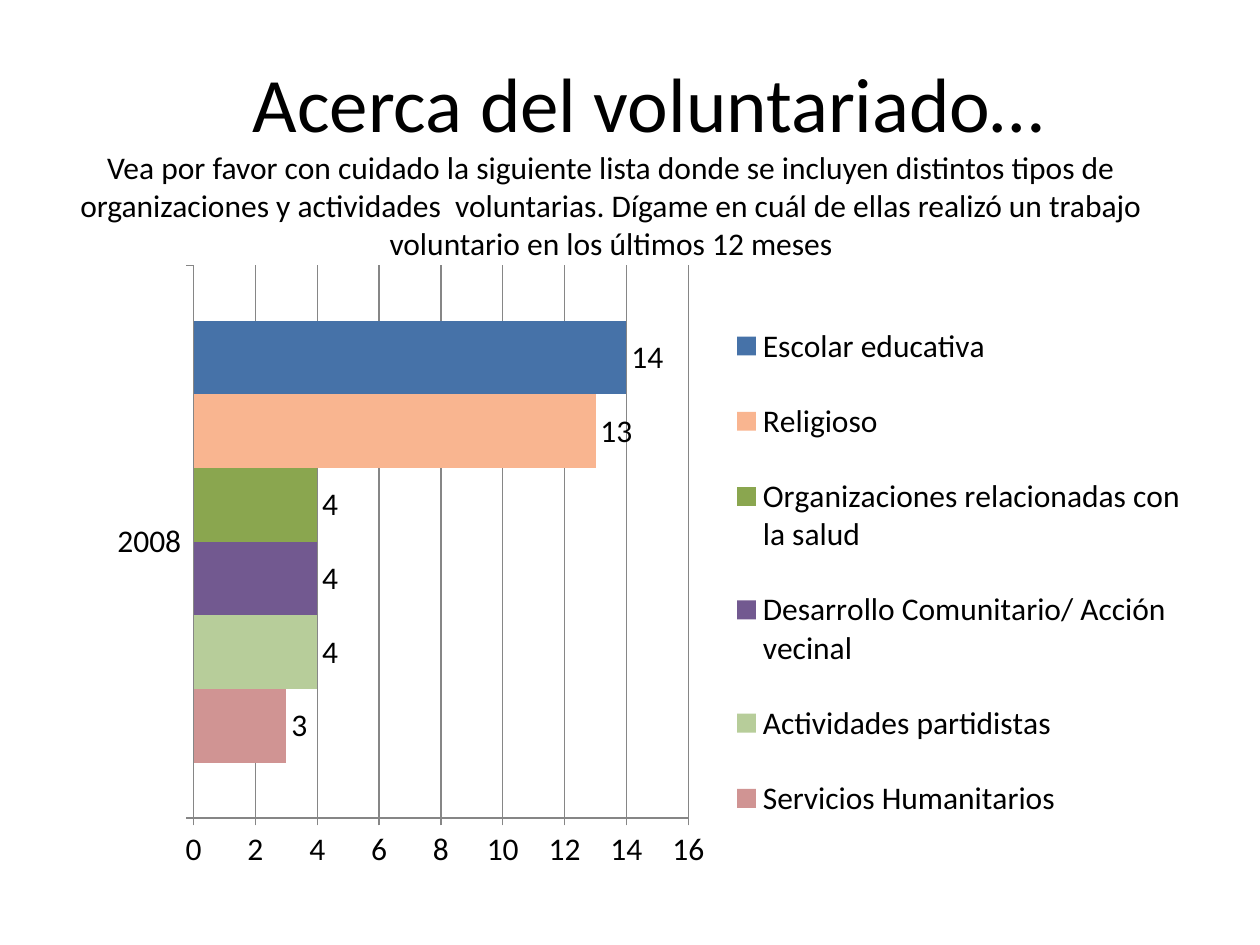
import pptx
import pptx.chart.data
import pptx.dml.color
import pptx.enum.chart
import pptx.enum.text
import pptx.oxml
import pptx.oxml.ns
import pptx.util
from pptx.util import Inches

FONT = "Calibri"
BLACK = pptx.dml.color.RGBColor(0x00, 0x00, 0x00)
GRAY = pptx.dml.color.RGBColor(0x86, 0x86, 0x86)
ROSE = pptx.dml.color.RGBColor(0xD0, 0x94, 0x93)
LIGHT_GREEN = pptx.dml.color.RGBColor(0xB7, 0xCD, 0x9A)
PURPLE = pptx.dml.color.RGBColor(0x72, 0x59, 0x90)
GREEN = pptx.dml.color.RGBColor(0x8A, 0xA6, 0x4F)
PEACH = pptx.dml.color.RGBColor(0xF9, 0xB5, 0x90)
BLUE = pptx.dml.color.RGBColor(0x46, 0x72, 0xA8)


def write_text(shape, text, size, color=BLACK, bottom=0.05):
    frame = shape.text_frame
    frame.word_wrap = True
    frame.auto_size = pptx.enum.text.MSO_AUTO_SIZE.NONE
    frame.vertical_anchor = pptx.enum.text.MSO_ANCHOR.MIDDLE
    frame.margin_bottom = Inches(bottom)
    paragraph = frame.paragraphs[0]
    paragraph.alignment = pptx.enum.text.PP_ALIGN.CENTER
    run = paragraph.add_run()
    run.text = text
    run.font.name = FONT
    run.font.size = pptx.util.Pt(size)
    run.font.color.rgb = color


def manual_layout(x, y, width, height, inner=False):
    target = '<c:layoutTarget val="inner"/>' if inner else ""
    return pptx.oxml.parse_xml(
        f'<c:layout {pptx.oxml.ns.nsdecls("c")}><c:manualLayout>{target}'
        '<c:xMode val="edge"/><c:yMode val="edge"/>'
        f'<c:x val="{x}"/><c:y val="{y}"/><c:w val="{width}"/><c:h val="{height}"/>'
        "</c:manualLayout></c:layout>")


presentation = pptx.Presentation()
presentation.slide_width = Inches(10)
presentation.slide_height = Inches(7.5)
slide = presentation.slides.add_slide(presentation.slide_layouts[5])

# Survey question in the title placeholder
question = slide.shapes.title
question.left, question.top = Inches(0.35), Inches(1.15)
question.width, question.height = Inches(9), Inches(1.25)
write_text(
    question,
    "Vea por favor con cuidado la siguiente lista donde se incluyen distintos tipos de "
    "organizaciones y actividades  voluntarias. Dígame en cuál de ellas realizó un trabajo "
    "voluntario en los últimos 12 meses",
    size=18, bottom=0.35)

# Bar chart
activities = [
    ("Servicios Humanitarios", 3, ROSE),
    ("Actividades partidistas", 4, LIGHT_GREEN),
    ("Desarrollo Comunitario/ Acción vecinal", 4, PURPLE),
    ("Organizaciones relacionadas con la salud", 4, GREEN),
    ("Religioso", 13, PEACH),
    ("Escolar educativa", 14, BLUE),
]
chart_data = pptx.chart.data.CategoryChartData(number_format="0")
chart_data.categories = ["2008"]
for name, value, color in activities:
    chart_data.add_series(name, [value])
chart = slide.shapes.add_chart(
    pptx.enum.chart.XL_CHART_TYPE.BAR_CLUSTERED,
    Inches(0.35), Inches(2.1), Inches(9.13), Inches(4.88), chart_data).chart
chart.has_title = False
chart.font.name = FONT
chart.font.size = pptx.util.Pt(18)
chart.font.color.rgb = BLACK

# Bars and value labels
plot = chart.plots[0]
plot.vary_by_categories = False
plot.gap_width = 150
plot.overlap = 0
for series, (name, value, color) in zip(plot.series, activities):
    series.format.fill.solid()
    series.format.fill.fore_color.rgb = color
    labels = series.data_labels
    labels.show_value = True
    labels.number_format = "0"
    labels.number_format_is_linked = False
    labels.position = pptx.enum.chart.XL_LABEL_POSITION.OUTSIDE_END

# Axes and gridlines
value_axis = chart.value_axis
value_axis.minimum_scale = 0
value_axis.maximum_scale = 16
value_axis.major_unit = 2
value_axis.has_major_gridlines = True
value_axis.tick_labels.number_format = "0"
value_axis.tick_labels.number_format_is_linked = False
for axis in (chart.category_axis, value_axis):
    axis.major_tick_mark = pptx.enum.chart.XL_TICK_MARK.OUTSIDE
for part in (chart.category_axis, value_axis, value_axis.major_gridlines):
    part.format.line.color.rgb = GRAY
    part.format.line.width = pptx.util.Pt(0.75)

# Legend and plot area positions
chart.has_legend = True
legend = chart.legend
legend.position = pptx.enum.chart.XL_LEGEND_POSITION.RIGHT
legend.include_in_layout = False
legend_element = chart.element.find(".//" + pptx.oxml.ns.qn("c:legend"))
legend_element.find(pptx.oxml.ns.qn("c:legendPos")).addnext(
    manual_layout(0.59, 0.04, 0.41, 0.92))
plot_area = chart.element.find(".//" + pptx.oxml.ns.qn("c:plotArea"))
for layout in plot_area.findall(pptx.oxml.ns.qn("c:layout")):
    plot_area.remove(layout)
plot_area.insert(0, manual_layout(0.13, 0, 0.43, 0.9, inner=True))

# Heading
heading = slide.shapes.add_textbox(Inches(0.9), Inches(0), Inches(8.5), Inches(1.61))
write_text(heading, "Acerca del voluntariado…", size=44)

presentation.save("out.pptx")
